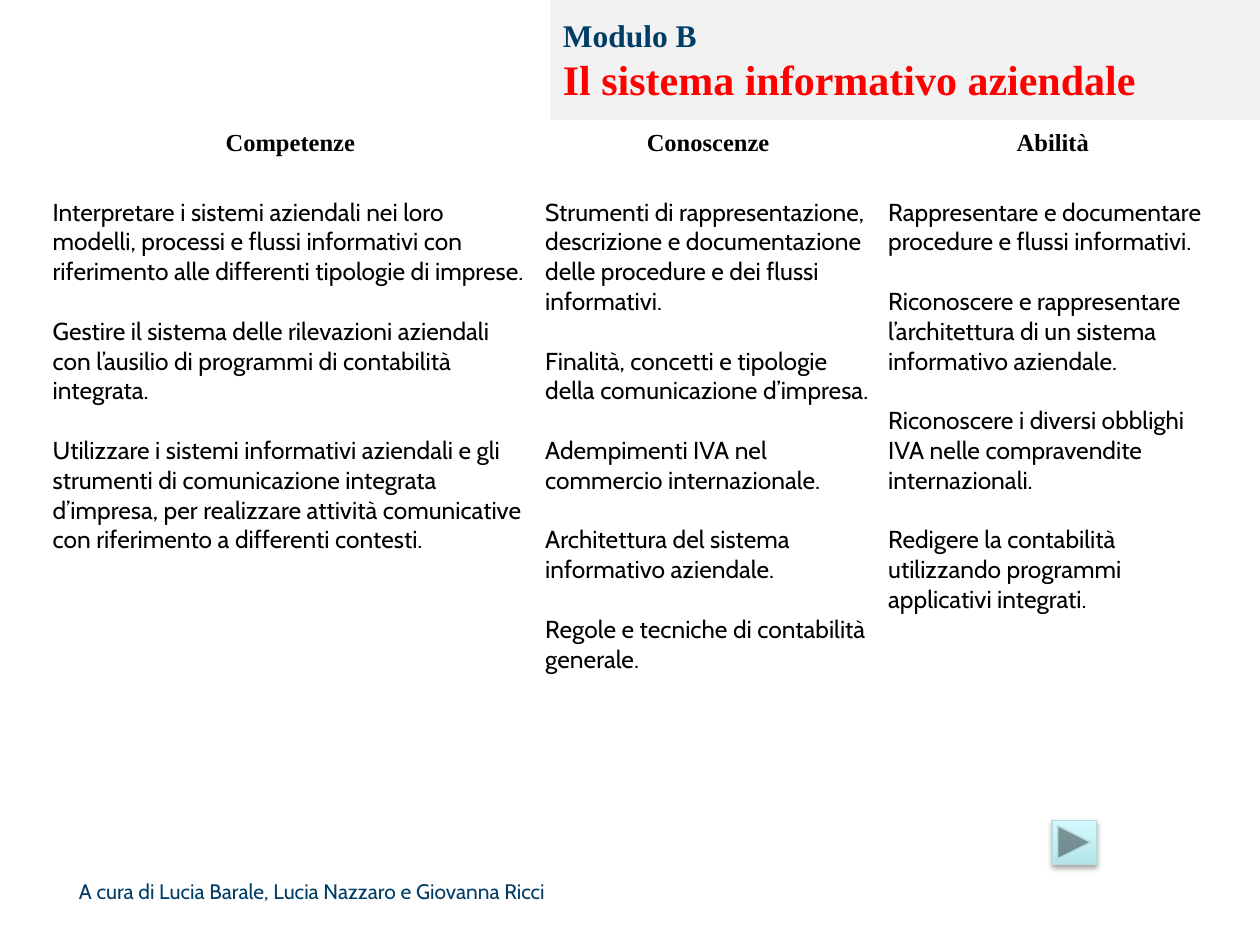
"""Build the module overview slide with its skills table."""
from dataclasses import dataclass

from lxml.etree import SubElement
from pptx import Presentation
from pptx.dml.color import RGBColor
from pptx.enum.shapes import MSO_SHAPE
from pptx.enum.text import MSO_ANCHOR, PP_ALIGN
from pptx.oxml.ns import qn
from pptx.util import Pt

SERIF = "Times New Roman"
SANS = "Cabin"
NAVY = "003D67"
BLACK = "000000"
BODY_SIZE = 14
LINE_GAP = 17


@dataclass(frozen=True)
class Topic:
    """A table column with its heading, width and entries."""

    heading: str
    width: float
    entries: tuple[str, ...]


TOPICS = (
    Topic("Competenze", 281.5, (
        "Interpretare i sistemi aziendali nei loro modelli, processi e flussi informativi "
        "con riferimento alle differenti tipologie di imprese.",
        "Gestire il sistema delle rilevazioni aziendali con l’ausilio di programmi di "
        "contabilità integrata.",
        "Utilizzare i sistemi informativi aziendali e gli strumenti di comunicazione "
        "integrata d’impresa, per realizzare attività comunicative con riferimento a "
        "differenti contesti.",
    )),
    Topic("Conoscenze", 196, (
        "Strumenti di rappresentazione, descrizione e documentazione delle procedure e "
        "dei flussi informativi.",
        "Finalità, concetti e tipologie della comunicazione d’impresa.",
        "Adempimenti IVA nel commercio internazionale.",
        "Architettura del sistema informativo aziendale.",
        "Regole e tecniche di contabilità generale.",
    )),
    Topic("Abilità", 198, (
        "Rappresentare e documentare procedure e flussi informativi.",
        "Riconoscere e rappresentare l’architettura di un sistema informativo aziendale.",
        "Riconoscere i diversi obblighi IVA nelle compravendite internazionali.",
        "Redigere la contabilità utilizzando programmi applicativi integrati.",
    )),
)
ROW_HEIGHTS = (21.6, 355.7, 19.4)


def rgb(code: str) -> RGBColor:
    """Turn a hex string into a colour."""
    return RGBColor.from_string(code)


def add_run(paragraph, text: str, size: float, font: str, colour: str, bold: bool = False) -> None:
    """Append one formatted run to a paragraph."""
    run = paragraph.add_run()
    run.text = text
    run.font.size = Pt(size)
    run.font.name = font
    run.font.bold = bold
    run.font.color.rgb = rgb(colour)


def draw_title(slide) -> None:
    """Draw the grey title panel."""
    panel = slide.shapes.add_shape(MSO_SHAPE.RECTANGLE, Pt(314.6), 0, Pt(405.4), Pt(68.4))
    panel.shadow.inherit = False
    panel.fill.solid()
    panel.fill.fore_color.rgb = rgb("F2F2F2")
    panel.line.fill.background()
    panel.text_frame.word_wrap = True
    panel.text_frame.vertical_anchor = MSO_ANCHOR.MIDDLE
    title = panel.text_frame.paragraphs[0]
    title.alignment = PP_ALIGN.LEFT
    add_run(title, "Modulo B", 18, SERIF, NAVY, True)
    title.add_line_break()
    add_run(title, "Il sistema informativo aziendale", 24, SERIF, "FF0000", True)


def fill_entries(cell, entries: tuple[str, ...]) -> None:
    """Write the entries of a topic, one paragraph each."""
    cell.margin_top = Pt(LINE_GAP)
    for index, entry in enumerate(entries):
        frame = cell.text_frame
        paragraph = frame.add_paragraph() if index else frame.paragraphs[0]
        if index:
            paragraph.space_before = Pt(LINE_GAP)
        add_run(paragraph, entry, BODY_SIZE, SANS, BLACK)


def draw_topics(slide) -> None:
    """Draw the table of topics."""
    table = slide.shapes.add_table(
        len(ROW_HEIGHTS), len(TOPICS), Pt(25.2), Pt(74.2),
        Pt(sum(topic.width for topic in TOPICS)), Pt(sum(ROW_HEIGHTS)),
    ).table
    table.first_row = False
    table.horz_banding = False
    for row, height in zip(table.rows, ROW_HEIGHTS):
        row.height = Pt(height)
    for cell in table.iter_cells():
        cell.fill.background()
        cell.margin_left = cell.margin_right = Pt(4.9)
        cell.margin_top = cell.margin_bottom = 0
        cell.text_frame.paragraphs[0].font.size = Pt(BODY_SIZE)
    for index, topic in enumerate(TOPICS):
        table.columns[index].width = Pt(topic.width)
        heading = table.cell(0, index).text_frame.paragraphs[0]
        heading.alignment = PP_ALIGN.CENTER
        add_run(heading, topic.heading, BODY_SIZE, SERIF, BLACK, True)
        fill_entries(table.cell(1, index), topic.entries)
    for index in range(2):
        table.cell(1, index).merge(table.cell(2, index))


def draw_next_button(slide) -> None:
    """Draw the forward button with its gradient and soft shadow."""
    button = slide.shapes.add_shape(
        MSO_SHAPE.ACTION_BUTTON_FORWARD_OR_NEXT, Pt(601.2), Pt(468.7), Pt(25.2), Pt(25.2))
    button.fill.gradient()
    button.fill.gradient_angle = 90
    for stop, colour in zip(button.fill.gradient_stops, ("B5E5E9", "D3FBFF")):
        stop.color.rgb = rgb(colour)
    button.line.color.rgb = rgb("B6DCDF")
    button.line.width = Pt(0.75)
    button.shadow.inherit = False
    effects = button.element.spPr.find(qn("a:effectLst"))
    shadow = SubElement(effects, qn("a:outerShdw"), blurRad=str(Pt(3.1)), dist=str(Pt(1.8)),
                        dir="5400000", rotWithShape="0")
    tint = SubElement(shadow, qn("a:srgbClr"), val=BLACK)
    SubElement(tint, qn("a:alpha"), val="35000")


def draw_credit(slide) -> None:
    """Draw the authors' line at the foot."""
    credit = slide.shapes.add_textbox(Pt(8.6), Pt(478.8), Pt(666), Pt(61.2)).text_frame
    credit.word_wrap = True
    credit.margin_left = Pt(36.5)
    credit.vertical_anchor = MSO_ANCHOR.MIDDLE
    add_run(credit.paragraphs[0], "A cura di Lucia Barale, Lucia Nazzaro e Giovanna Ricci",
            12, SANS, NAVY)


def main() -> None:
    """Build and save the slide."""
    deck = Presentation()
    deck.slide_width, deck.slide_height = Pt(720), Pt(540)
    slide = deck.slides.add_slide(deck.slide_layouts[6])
    draw_credit(slide)
    draw_topics(slide)
    draw_next_button(slide)
    draw_title(slide)
    deck.save("out.pptx")


if __name__ == "__main__":
    main()
